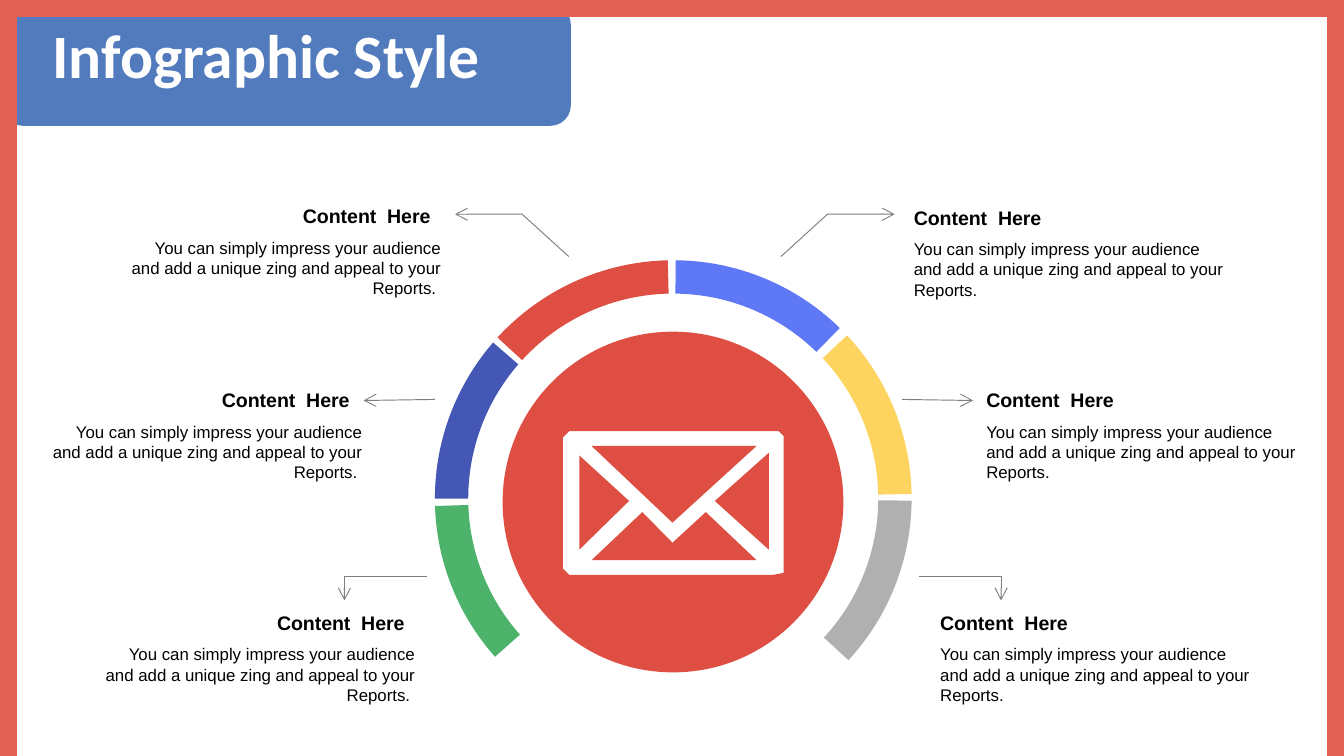
from lxml.etree import SubElement
from pptx import Presentation
from pptx.dml.color import RGBColor
from pptx.enum.shapes import MSO_CONNECTOR, MSO_SHAPE
from pptx.enum.text import PP_ALIGN
from pptx.oxml.ns import qn
from pptx.util import Cm, Pt

COLORS = {
    "frame": "E15F54", "banner": "527BBD", "white": "FFFFFF", "black": "000000",
    "line": "7F7F7F", "grey": "B0B0B1", "green": "4DB36A", "navy": "4457B5",
    "red": "DE4E42", "blue": "5F79F6", "yellow": "FDD460",
}

presentation = Presentation()
presentation.slide_width = Cm(25.4)
presentation.slide_height = Cm(14.29)
slide = presentation.slides.add_slide(presentation.slide_layouts[6])
shapes = slide.shapes


def add_text(text, left, top, width, height, size=9, font="Arial", color="black",
             bold=False, align=PP_ALIGN.LEFT, line_spacing=1.0):
    box = shapes.add_textbox(Cm(left), Cm(top), Cm(width), Cm(height))
    box.text_frame.word_wrap = True
    paragraph = box.text_frame.paragraphs[0]
    paragraph.alignment = align
    paragraph.line_spacing = line_spacing
    run = paragraph.add_run()
    run.text = text
    run.font.size = Pt(size)
    run.font.name = font
    run.font.bold = bold
    run.font.color.rgb = RGBColor.from_string(COLORS[color])


def add_part(fill=None, kind=None, box=None, adjustments=(), contours=()):
    """Add a preset shape in a box, or an outline; without a fill it is an open line."""
    if kind is not None:
        shape = shapes.add_shape(kind, *[Cm(length) for length in box])
        for index, value in enumerate(adjustments):
            shape.adjustments[index] = value
    else:
        contours = [[(Cm(x), Cm(y)) for x, y in contour] for contour in contours]
        builder = shapes.build_freeform(*contours[0][0])
        for number, contour in enumerate(contours):
            if number:
                builder.move_to(*contour[0])
            builder.add_line_segments(contour[1:], close=fill is not None)
        shape = builder.convert_to_shape()
    shape.shadow.inherit = False
    if fill:
        shape.fill.solid()
        shape.fill.fore_color.rgb = RGBColor.from_string(COLORS[fill])
        shape.line.fill.background()
    else:
        shape.fill.background()
    return shape


# Banner and title
add_part("banner", MSO_SHAPE.ROUNDED_RECTANGLE, (0.05, 0.08, 10.74, 2.3), [0.17])
add_text("Infographic Style", 0.74, 0.35, 24.1, 1.75, size=33, font="Calibri",
         color="white", bold=True, line_spacing=0.9)

# Ring of six segments, angles clockwise from the right
for color, start, end in [
    ("grey", 0.5, 42.7), ("green", 138.4, 178.2), ("navy", 180, 220.9),
    ("yellow", 316.8, 358.9), ("red", 222.5, 268.7), ("blue", 270.6, 314.3),
]:
    # Angles are stored in 60000ths of a degree, adjustments in 100000ths
    add_part(color, MSO_SHAPE.BLOCK_ARC, (8.22, 4.92, 9.01, 9.01),
             [start * 0.6, end * 0.6, 0.07])

# Headings and descriptions
heading = "Content  Here"
description = "You can simply impress your audience and add a unique zing and appeal to your Reports."
text_width = 6.43
for left, top in [(17.02, 3.76), (18.39, 7.21), (17.52, 11.42)]:
    add_text(heading, left, top, text_width, 0.7, size=10.5, bold=True)
    add_text(description, left, top + 0.63, text_width, 1.42)
for heading_right, description_right, top in [
    (8.39, 8.58, 3.73), (6.86, 7.09, 7.21), (7.9, 8.09, 11.42),
]:
    add_text(heading, heading_right - text_width, top, text_width, 0.7,
             size=10.5, bold=True, align=PP_ALIGN.RIGHT)
    add_text(description + " ", description_right - text_width, top + 0.63, text_width, 1.42,
             align=PP_ALIGN.RIGHT)

# Arrows from the ring to the texts
arrows = [
    add_part(contours=[points]) for points in [
        [(14.76, 4.85), (15.64, 4.05), (16.91, 4.05)],
        [(10.75, 4.85), (9.87, 4.05), (8.6, 4.05)],
        [(8.07, 10.9), (6.51, 10.9), (6.51, 11.35)],
        [(17.37, 10.9), (18.92, 10.9), (18.92, 11.35)],
    ]
]
for start_x, end_x in [(17.05, 18.39), (8.22, 6.87)]:
    connector = shapes.add_connector(
        MSO_CONNECTOR.STRAIGHT, Cm(start_x), Cm(7.55), Cm(end_x), Cm(7.57))
    SubElement(connector.element.spPr, qn("a:effectLst"))
    arrows.append(connector)
for arrow in arrows:
    arrow.line.color.rgb = RGBColor.from_string(COLORS["line"])
    arrow.line.width = Pt(0.5)
    SubElement(arrow.element.spPr.find(qn("a:ln")), qn("a:tailEnd"), type="arrow")

# Slide frame
for left in (0, 25.08):
    for top in (0, 3.49):
        add_part("frame", MSO_SHAPE.RECTANGLE, (left, top, 0.32, 10.8))
add_part("frame", MSO_SHAPE.RECTANGLE, (0.32, 0, 24.76, 0.32))

# Disc of four quarter curves, with the envelope body cut out
center_x, center_y, radius, handle = 12.72, 9.49, 3.22, 1.78
quarter = [(radius, handle), (handle, radius), (0, radius)]
circle = [(center_x + radius, center_y)]
for turn in range(4):
    circle += [(center_x + x, center_y + y) for x, y in quarter]
    quarter = [(-y, x) for x, y in quarter]
envelope = [
    (10.76, 8.15), (14.72, 8.15), (14.81, 8.24), (14.81, 10.83),
    (14.6, 10.87), (10.76, 10.87), (10.64, 10.75), (10.64, 8.27),
]
disc = add_part("red", contours=[circle, envelope])
segments = list(disc.element.iter(qn("a:lnTo")))[:12]
for first, second, third in zip(segments[::3], segments[1::3], segments[2::3]):
    first.tag = qn("a:cubicBezTo")
    for segment in (second, third):
        first.append(segment[0])
        segment.getparent().remove(segment)

# Envelope panels: top, bottom, left, right
for panel in [
    [(11.18, 8.43), (14.3, 8.43), (12.71, 9.88)],
    [(11.18, 10.59), (12.14, 9.68), (12.71, 10.26), (13.34, 9.68), (14.3, 10.59)],
    [(10.95, 8.61), (11.89, 9.47), (10.95, 10.39)],
    [(14.53, 8.56), (13.51, 9.47), (14.53, 10.39)],
]:
    add_part("red", contours=[panel])

presentation.save("out.pptx")
